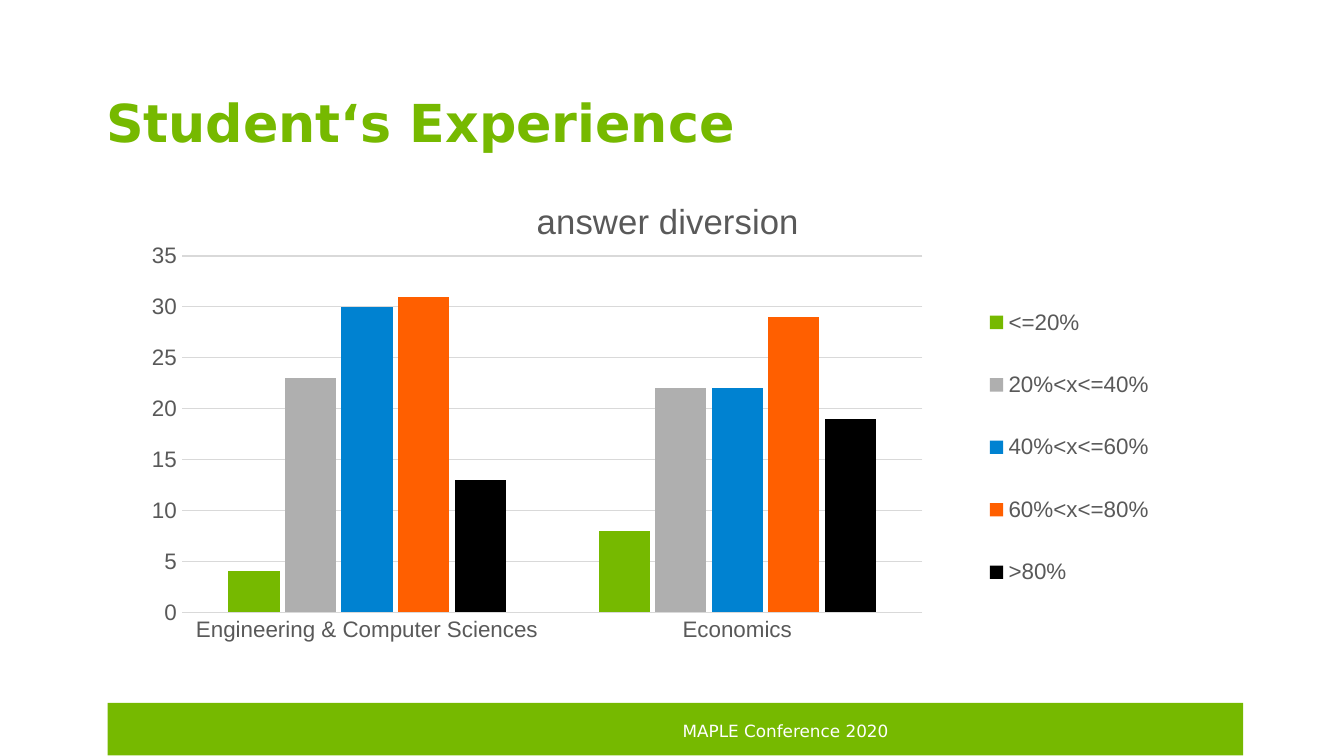
import pptx
import pptx.chart.data
import pptx.dml.color
import pptx.enum.chart
import pptx.enum.shapes
import pptx.oxml
import pptx.oxml.ns
import pptx.util
from pptx.util import Inches

COLORS = {
    "green": "76B900",
    "gray": "AFAFAF",
    "blue": "0082D1",
    "orange": "FF5F00",
    "black": "000000",
    "white": "FFFFFF",
    "label": "595959",
    "grid": "D9D9D9",
}

FACULTIES = ["Engineering & Computer Sciences", "Economics"]
ANSWERS = [
    ("<=20%", (4, 8), "green"),
    ("20%<x<=40%", (23, 22), "gray"),
    ("40%<x<=60%", (30, 22), "blue"),
    ("60%<x<=80%", (31, 29), "orange"),
    (">80%", (13, 19), "black"),
]


def rgb(color):
    return pptx.dml.color.RGBColor.from_string(COLORS[color])


def style_font(font, name, size, color, bold=False):
    font.name = name
    font.size = pptx.util.Pt(size)
    font.bold = bold
    font.color.rgb = rgb(color)


def style_line(line, color):
    line.color.rgb = rgb(color)
    line.width = pptx.util.Pt(0.75)


def add_band(slide, left, top, width, height):
    band = slide.shapes.add_shape(
        pptx.enum.shapes.MSO_SHAPE.RECTANGLE,
        Inches(left), Inches(top), Inches(width), Inches(height))
    band.shadow.inherit = False
    band.fill.solid()
    band.fill.fore_color.rgb = rgb("green")
    band.line.fill.background()


def add_text(slide, text, box, size, color, bold=False, top_inset=0.0):
    frame = slide.shapes.add_textbox(*map(Inches, box)).text_frame
    frame.word_wrap = True
    frame.margin_left = frame.margin_right = frame.margin_bottom = 0
    frame.margin_top = Inches(top_inset)
    paragraph = frame.paragraphs[0]
    paragraph.text = text
    style_font(paragraph.font, "DejaVu Sans", size, color, bold)


def place(element, index, inner=False, **fractions):
    for automatic in element.findall(pptx.oxml.ns.qn("c:layout")):
        element.remove(automatic)
    target = '<c:layoutTarget val="inner"/>' if inner else ""
    modes = "".join(f'<c:{key}Mode val="edge"/>' for key in "xy")
    sizes = "".join(f'<c:{key} val="{value}"/>' for key, value in fractions.items())
    element.insert(index, pptx.oxml.parse_xml(
        f'<c:layout {pptx.oxml.ns.nsdecls("c")}><c:manualLayout>'
        f"{target}{modes}{sizes}</c:manualLayout></c:layout>"))


def style_axes(chart):
    for axis in (chart.category_axis, chart.value_axis):
        axis.major_tick_mark = pptx.enum.chart.XL_TICK_MARK.NONE
        axis.minor_tick_mark = pptx.enum.chart.XL_TICK_MARK.NONE
        style_font(axis.tick_labels.font, "Arial", 12, "label")
    style_line(chart.category_axis.format.line, "grid")
    percent = chart.value_axis
    percent.minimum_scale, percent.maximum_scale, percent.major_unit = 0, 35, 5
    percent.tick_labels.number_format = "0"
    percent.tick_labels.number_format_is_linked = False
    percent.format.line.fill.background()
    style_line(percent.major_gridlines.format.line, "grid")


def add_answer_chart(slide, left, top, width, height):
    data = pptx.chart.data.CategoryChartData()
    data.categories = FACULTIES
    for name, values, _ in ANSWERS:
        data.add_series(name, values)
    chart = slide.shapes.add_chart(
        pptx.enum.chart.XL_CHART_TYPE.COLUMN_CLUSTERED,
        Inches(left), Inches(top), Inches(width), Inches(height), data).chart
    style_font(chart.font, "Arial", 10, "black")

    bars = chart.plots[0]
    bars.vary_by_categories = False
    bars.gap_width = 180
    bars.overlap = -10
    for series, (_, _, color) in zip(bars.series, ANSWERS):
        series.format.fill.solid()
        series.format.fill.fore_color.rgb = rgb(color)
    style_axes(chart)

    chart.has_title = True
    heading = chart.chart_title.text_frame
    heading.text = "answer diversion"
    style_font(heading.paragraphs[0].font, "Arial", 18.6, "label")

    chart.has_legend = True
    chart.legend.position = pptx.enum.chart.XL_LEGEND_POSITION.BOTTOM
    chart.legend.include_in_layout = False
    style_font(chart.legend.font, "Arial", 12, "label")

    plot_area = chart.element.find(".//" + pptx.oxml.ns.qn("c:plotArea"))
    title = chart.element.find(".//" + pptx.oxml.ns.qn("c:title"))
    legend = chart.element.find(".//" + pptx.oxml.ns.qn("c:legend"))
    place(plot_area, 0, inner=True, x=0.05, y=0.15, w=0.68, h=0.67)
    place(title, 1, x=0.37, y=0.03)
    place(legend, 1, x=0.78, y=0.18, w=0.17, h=0.66)


def main():
    deck = pptx.Presentation()
    deck.slide_width = Inches(10)
    deck.slide_height = Inches(10) * 9 // 16
    slide = deck.slides.add_slide(deck.slide_layouts[6])
    add_band(slide, 0.8, 5.23, 8.45, 0.39)
    add_text(slide, "Student‘s Experience", (0.79, 0.67, 8.71, 0.55), 28, "green", bold=True)
    add_text(slide, "MAPLE Conference 2020", (5.08, 5.34, 3, 0.24), 9, "white", top_inset=0.02)
    add_answer_chart(slide, 0.95, 1.31, 8.1, 3.96)
    deck.save("out.pptx")


if __name__ == "__main__":
    main()
